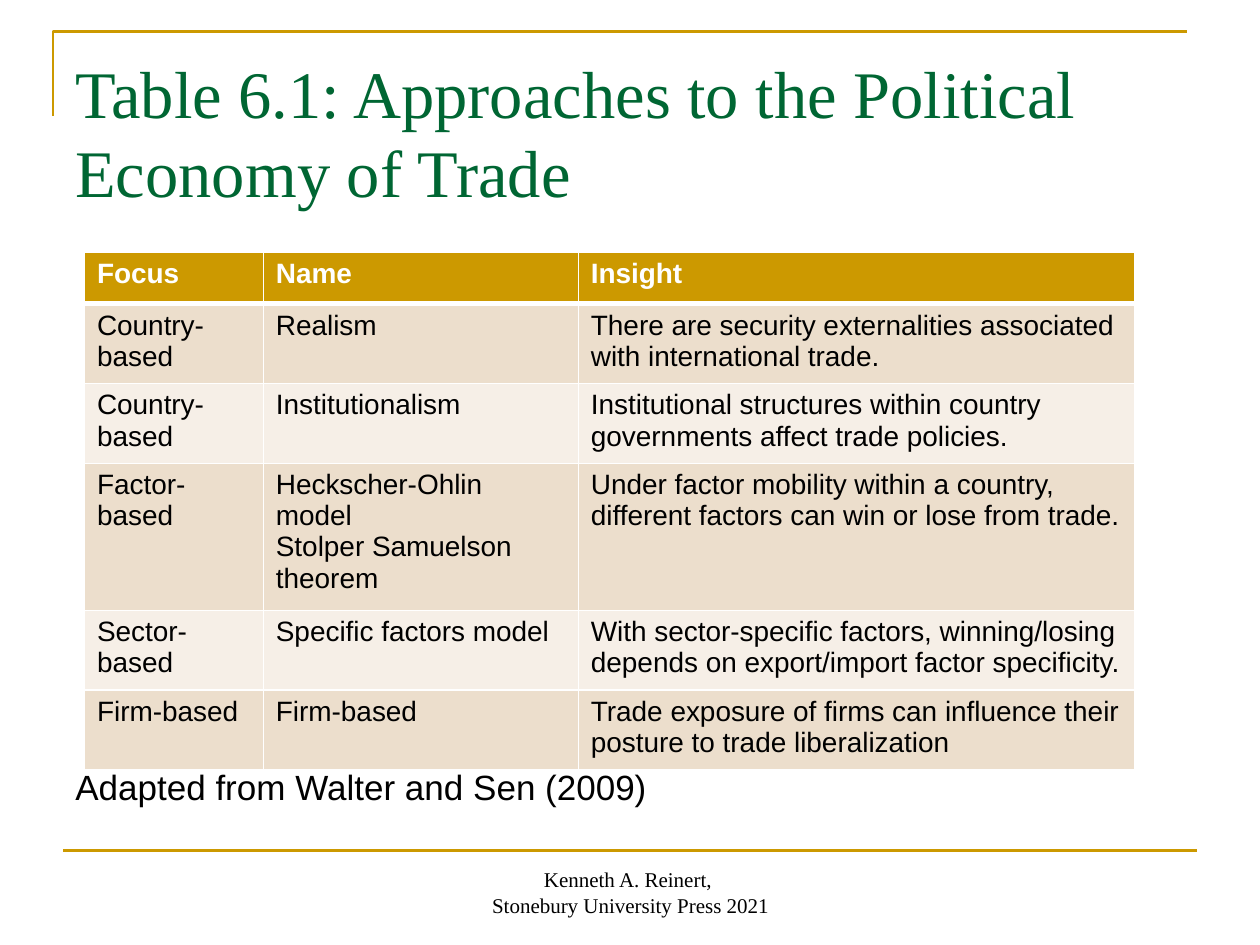
from dataclasses import dataclass

from lxml import etree
from pptx import Presentation
from pptx import util as u
from pptx.dml.color import RGBColor
from pptx.enum import shapes, text
from pptx.oxml.ns import qn


@dataclass(frozen=True)
class Theme:
    gold: str = "CC9900"
    green: str = "006633"
    black: str = "000000"
    white: str = "FFFFFF"
    bands: tuple = ("ECDECC", "F6EFE7")
    serif: str = "Times New Roman"
    sans: str = "Arial"
    title_size: float = 38
    source_size: float = 20
    table_size: float = 16
    footer_size: float = 12
    rule_width: float = 1.5


def write(frame, content, *, font, size, color, bold=False, align=None):
    """Fill a text frame, one paragraph per line of content."""
    for i, line in enumerate(content.split("\n")):
        paragraph = frame.paragraphs[0] if i == 0 else frame.add_paragraph()
        paragraph.alignment = align
        run = paragraph.add_run()
        run.text = line
        run.font.name = font
        run.font.size = u.Pt(size)
        run.font.bold = bold
        run.font.color.rgb = RGBColor.from_string(color)


class SlideBuilder:
    def __init__(self, slide, theme):
        self.slide = slide
        self.theme = theme

    def style_rule(self, line):
        line.color.rgb = RGBColor.from_string(self.theme.gold)
        line.width = u.Pt(self.theme.rule_width)

    def corner(self, left, top, right, bottom):
        outline = self.slide.shapes.build_freeform(
            u.Inches(left), u.Inches(bottom))
        outline.add_line_segments(
            [(u.Inches(left), u.Inches(top)), (u.Inches(right), u.Inches(top))],
            close=False)
        bracket = outline.convert_to_shape()
        bracket.shadow.inherit = False
        bracket.fill.background()
        self.style_rule(bracket.line)

    def rule(self, left, right, y):
        rule = self.slide.shapes.add_connector(
            shapes.MSO_CONNECTOR.STRAIGHT,
            u.Inches(left), u.Inches(y), u.Inches(right), u.Inches(y))
        self.style_rule(rule.line)
        etree.SubElement(rule._element.spPr, qn("a:effectLst"))

    def text(self, box, content, anchor=text.MSO_ANCHOR.TOP, **style):
        frame = self.slide.shapes.add_textbox(*map(u.Inches, box)).text_frame
        frame.word_wrap = True
        frame.vertical_anchor = anchor
        write(frame, content, **style)

    def border(self, cell, **widths):
        properties = cell._tc.get_or_add_tcPr()
        for position, (side, width) in enumerate(widths.items()):
            edge = etree.Element(qn(f"a:{side}"), w=str(u.Pt(width)))
            fill = etree.SubElement(edge, qn("a:solidFill"))
            etree.SubElement(fill, qn("a:srgbClr"), val=self.theme.white)
            properties.insert(position, edge)

    def table(self, left, top, widths, heights, rows):
        theme = self.theme
        table = self.slide.shapes.add_table(
            len(rows), len(widths), u.Inches(left), u.Inches(top),
            u.Inches(sum(widths)), u.Inches(sum(heights))).table
        for column, width in zip(table.columns, widths):
            column.width = u.Inches(width)
        for r, (row, height) in enumerate(zip(rows, heights)):
            table.rows[r].height = u.Inches(height)
            header = r == 0
            fill = theme.gold if header else theme.bands[(r - 1) % 2]
            for c, content in enumerate(row):
                cell = table.cell(r, c)
                cell.fill.solid()
                cell.fill.fore_color.rgb = RGBColor.from_string(fill)
                write(cell.text_frame, content, font=theme.sans,
                      size=theme.table_size, bold=header,
                      color=theme.white if header else theme.black)
                self.border(cell, lnL=1, lnR=1, lnT=3 if r == 1 else 1,
                            lnB=3 if header else 1)


APPROACHES = [
    ("Focus", "Name", "Insight"),
    ("Country-based", "Realism",
     "There are security externalities associated with international trade."),
    ("Country-based", "Institutionalism",
     "Institutional structures within country governments affect trade policies."),
    ("Factor-based", "Heckscher-Ohlin model\nStolper Samuelson theorem",
     "Under factor mobility within a country, different factors can win or lose "
     "from trade."),
    ("Sector-based", "Specific factors model",
     "With sector-specific factors, winning/losing depends on export/import "
     "factor specificity."),
    ("Firm-based", "Firm-based",
     "Trade exposure of firms can influence their posture to trade liberalization"),
]


def main():
    theme = Theme()
    deck = Presentation()
    deck.slide_width, deck.slide_height = u.Inches(10), u.Inches(7.5)
    builder = SlideBuilder(deck.slides.add_slide(deck.slide_layouts[6]), theme)

    # Frame lines
    builder.corner(left=0.42, top=0.25, right=9.42, bottom=0.92)
    builder.rule(left=0.5, right=9.5, y=6.75)

    # Title
    builder.text((0.5, 0.36, 9, 1.25),
                 "Table 6.1: Approaches to the Political Economy of Trade",
                 font=theme.serif, size=theme.title_size, color=theme.green)

    # Table and its source
    builder.table(0.67, 2, widths=(1.42, 2.5, 4.42),
                  heights=(0.41, 0.59, 0.59, 1.09, 0.59, 0.59), rows=APPROACHES)
    builder.text((0.5, 6.03, 9, 0.45), "Adapted from Walter and Sen (2009)",
                 font=theme.sans, size=theme.source_size, color=theme.black)

    # Footer
    builder.text((3.42, 6.83, 3.17, 0.5),
                 "Kenneth A. Reinert, \nStonebury University Press 2021",
                 anchor=text.MSO_ANCHOR.BOTTOM, font=theme.serif,
                 size=theme.footer_size, color=theme.black,
                 align=text.PP_ALIGN.CENTER)

    deck.save("out.pptx")


if __name__ == "__main__":
    main()
